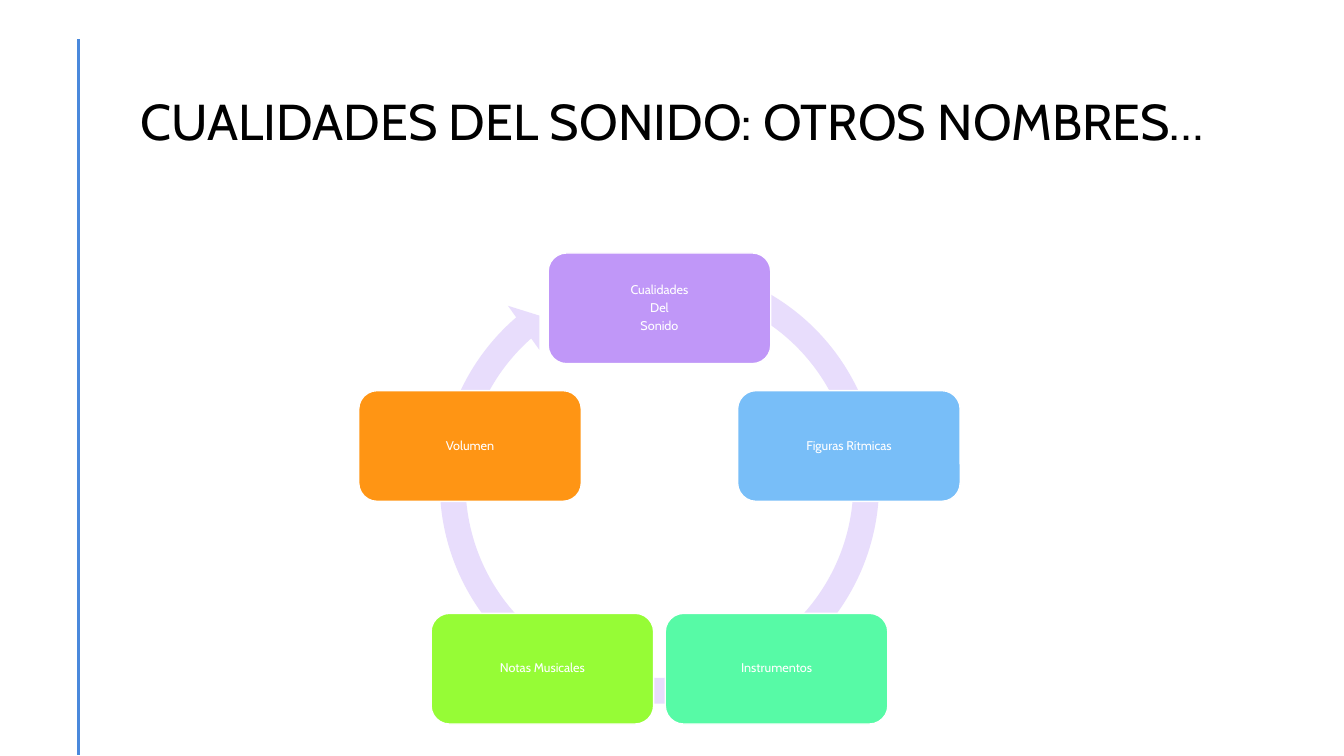
import math
from dataclasses import dataclass

import pptx
import pptx.dml.color
import pptx.enum.shapes
import pptx.enum.text
import pptx.oxml.ns
import pptx.util
from lxml import etree
from pptx.util import Cm, Pt

FONT = "Cabin"
CENTER_X, CENTER_Y, RADIUS = 16.62, 12.79, 5.02
BOX_W, BOX_H = 5.61, 2.79
RING_SIZE = 11.79


@dataclass
class Node:
    text: str
    color: str


NODES = [
    Node("Cualidades\nDel\nSonido", "C097F8"),
    Node("Figuras Rítmicas", "78BEF8"),
    Node("Instrumentos", "57FAA6"),
    Node("Notas Musicales", "96FC36"),
    Node("Volumen", "FF9514"),
]


def rgb(color: str) -> pptx.dml.color.RGBColor:
    return pptx.dml.color.RGBColor.from_string(color)


def format_text(tf, size: float, color: str, space_after: float = 0) -> None:
    tf.word_wrap = True
    tf.vertical_anchor = pptx.enum.text.MSO_ANCHOR.MIDDLE
    for p in tf.paragraphs:
        p.alignment = pptx.enum.text.PP_ALIGN.CENTER
        p.line_spacing = 0.9
        p.space_before = Pt(0)
        p.space_after = Pt(space_after)
        for r in p.runs:
            r.font.name = FONT
            r.font.size = Pt(size)
            r.font.color.rgb = rgb(color)


def add_side_line(s) -> None:
    line = s.shapes.add_connector(
        pptx.enum.shapes.MSO_CONNECTOR.STRAIGHT, Cm(1.98), Cm(0.99), Cm(1.98), Cm(19.02))
    line.line.color.rgb = rgb("4A89DC")
    line.line.width = Pt(2)
    etree.SubElement(line._element.spPr, pptx.oxml.ns.qn("a:effectLst"))


def set_title(s, text: str) -> None:
    title = s.shapes.title
    title.left, title.top, title.width, title.height = Cm(2.34), Cm(1.55), Cm(29.21), Cm(3.15)
    title.text_frame.text = text
    format_text(title.text_frame, 36, "000000")


def add_ring(s) -> None:
    sp = s.shapes.add_shape(
        pptx.enum.shapes.MSO_SHAPE.CIRCULAR_ARROW,
        Cm(CENTER_X - RING_SIZE / 2), Cm(6.3), Cm(RING_SIZE), Cm(RING_SIZE))
    for i, value in enumerate((0.055, 3.307, 137.386, 174.087, 0.058)):
        sp.adjustments[i] = value
    sp.shadow.inherit = False
    sp.fill.solid()
    sp.fill.fore_color.rgb = rgb("E8DDFC")
    sp.line.fill.background()


def add_node(s, node: Node, angle: float) -> None:
    """Place a box on the ring, with the angle measured clockwise from the top."""
    x = CENTER_X + RADIUS * math.sin(angle)
    y = CENTER_Y - RADIUS * math.cos(angle)
    sp = s.shapes.add_shape(
        pptx.enum.shapes.MSO_SHAPE.ROUNDED_RECTANGLE,
        Cm(x - BOX_W / 2), Cm(y - BOX_H / 2), Cm(BOX_W), Cm(BOX_H))
    sp.shadow.inherit = False
    sp.fill.solid()
    sp.fill.fore_color.rgb = rgb(node.color)
    sp.line.color.rgb = rgb("FFFFFF")
    sp.line.width = Pt(1)
    tf = sp.text_frame
    tf.text = node.text
    tf.margin_left = tf.margin_right = tf.margin_top = tf.margin_bottom = Cm(0.1)
    format_text(tf, 9, "FFFFFF", space_after=3.15)


def main() -> None:
    prs = pptx.Presentation()
    prs.slide_width, prs.slide_height = Cm(33.87), Cm(19.05)
    s = prs.slides.add_slide(prs.slide_layouts[5])
    add_side_line(s)
    set_title(s, "CUALIDADES DEL SONIDO: OTROS NOMBRES…")
    add_ring(s)
    for i, node in enumerate(NODES):
        add_node(s, node, i * math.tau / len(NODES))
    prs.save("out.pptx")


if __name__ == "__main__":
    main()
